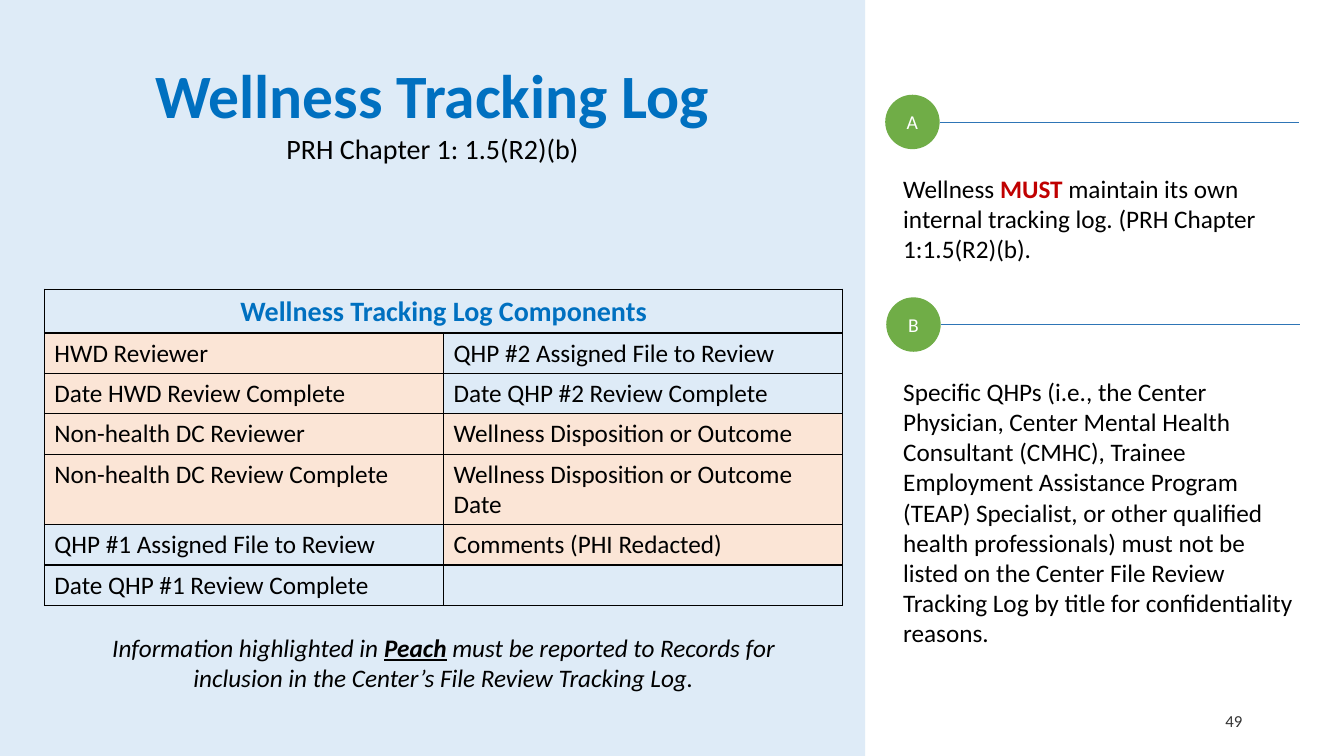
from lxml import etree
from pptx import Presentation, util as u
from pptx.dml.color import RGBColor
from pptx.enum import shapes, text
from pptx.oxml.ns import qn

PX = 9144  # 100 px to the inch
BLACK, BLUE, PEACH, GREEN = "000000", "0070C0", "FBE5D6", "70AD47"
LEFT, CENTER, RIGHT = text.PP_ALIGN.LEFT, text.PP_ALIGN.CENTER, text.PP_ALIGN.RIGHT


def rgb(color):
    return RGBColor.from_string(color)


def write(p, runs, size, color=BLACK, align=LEFT, bold=False, italic=False):
    """Fill a paragraph with runs and return the runs."""
    p.alignment = align
    p.font.name, p.font.size = "Calibri", u.Pt(size)
    p.font.bold, p.font.italic = bold, italic
    p.font.color.rgb = rgb(color)
    added = []
    for words in runs:
        r = p.add_run()
        r.text = words
        added.append(r)
    return added


prs = Presentation()
prs.slide_width, prs.slide_height = 1333 * PX, 750 * PX
s = prs.slides.add_slide(prs.slide_layouts[6])

# Left panel
panel = s.shapes.add_shape(shapes.MSO_SHAPE.RECTANGLE, 0, 0, 858 * PX, 750 * PX)
panel.shadow.inherit = False
panel.fill.solid()
panel.fill.fore_color.rgb = rgb("DEEBF7")
panel.line.fill.background()

# Text boxes
boxes = {}
for name, x, y, w, h in [
    ("title", 0, 52, 858, 118),
    ("rule_a", 886, 167, 411, 101),
    ("rule_b", 886, 368, 411, 283),
    ("footnote", 58, 622, 764, 71),
    ("page", 942, 695, 300, 40),
]:
    boxes[name] = s.shapes.add_textbox(x * PX, y * PX, w * PX, h * PX).text_frame
    boxes[name].word_wrap = True

title = boxes["title"]
write(title.paragraphs[0], ["Wellness Tracking Log"], 44, BLUE, CENTER, bold=True)
write(title.add_paragraph(), ["PRH Chapter 1: 1.5(R2)(b)"], 20, align=CENTER)

must = write(boxes["rule_a"].paragraphs[0], [
    "Wellness ", "MUST ",
    "maintain its own internal tracking log. (PRH Chapter 1:1.5(R2)(b)."], 18)[1]
must.font.bold = True
must.font.color.rgb = rgb("C00000")

write(boxes["rule_b"].paragraphs[0], [
    "Specific QHPs (i.e., the Center Physician, Center Mental Health Consultant (CMHC), "
    "Trainee Employment Assistance Program (TEAP) Specialist, or other qualified health "
    "professionals) must not be listed on the Center File Review Tracking Log by title "
    "for confidentiality reasons."], 18)

peach = write(boxes["footnote"].paragraphs[0], [
    "Information highlighted in ", "Peach",
    " must be reported to Records for inclusion in the Center’s File Review Tracking Log."],
    18, align=CENTER, italic=True)[1]
peach.font.bold = peach.font.underline = True

boxes["page"].vertical_anchor = text.MSO_ANCHOR.MIDDLE
page = boxes["page"].paragraphs[0]
page.space_after = u.Pt(6)
write(page, ["49"], 12, "333333", RIGHT)

# Lettered markers with their rules
for letter, x, y in [("A", 878, 94), ("B", 879, 295)]:
    sp = s.shapes.add_shape(shapes.MSO_SHAPE.OVAL, x * PX, y * PX, 54 * PX, 54 * PX)
    sp.shadow.inherit = False
    sp.fill.solid()
    sp.fill.fore_color.rgb = rgb(GREEN)
    sp.line.fill.background()
    sp.text_frame.vertical_anchor = text.MSO_ANCHOR.MIDDLE
    write(sp.text_frame.paragraphs[0], [letter], 14, "FFFFFF", CENTER)

    mid = (y + 27) * PX
    line = s.shapes.add_connector(
        shapes.MSO_CONNECTOR.STRAIGHT, (x + 54) * PX, mid, (x + 410) * PX, mid)
    line.line.color.rgb = rgb("2E75B6")
    line.line.width = u.Pt(0.5)
    etree.SubElement(line._element.spPr, qn("a:effectLst"))

# Table of log components: (wording, reported to Records)
rows = [
    [("Wellness Tracking Log Components", False), ("", False)],
    [("HWD Reviewer", True), ("QHP #2 Assigned File to Review", False)],
    [("Date HWD Review Complete", True), ("Date QHP #2 Review Complete", False)],
    [("Non-health DC Reviewer", True), ("Wellness Disposition or Outcome", True)],
    [("Non-health DC Review Complete", True), ("Wellness Disposition or Outcome Date", True)],
    [("QHP #1 Assigned File to Review", False), ("Comments (PHI Redacted)", True)],
    [("Date QHP #1 Review Complete", False), ("", False)],
]
table = s.shapes.add_table(
    len(rows), 2, 44 * PX, 287 * PX, 792 * PX, 32 * len(rows) * PX).table
table.first_row = table.horz_banding = False
for row in table.rows:
    row.height = 32 * PX
for i, row in enumerate(rows):
    for j, (words, reported) in enumerate(row):
        cell = table.cell(i, j)
        tcPr = cell._tc.get_or_add_tcPr()
        for side in ("lnL", "lnR", "lnT", "lnB"):
            ln = etree.SubElement(tcPr, qn("a:" + side), w=str(u.Pt(1)))
            fill = etree.SubElement(ln, qn("a:solidFill"))
            etree.SubElement(fill, qn("a:srgbClr"), val=BLACK)
        if reported:
            cell.fill.solid()
            cell.fill.fore_color.rgb = rgb(PEACH)
        else:
            cell.fill.background()
        p = cell.text_frame.paragraphs[0]
        if i == 0 and words:
            write(p, [words], 20, BLUE, CENTER, bold=True)
        elif words:
            write(p, [words], 18)
table.cell(0, 0).merge(table.cell(0, 1))

prs.save("out.pptx")
